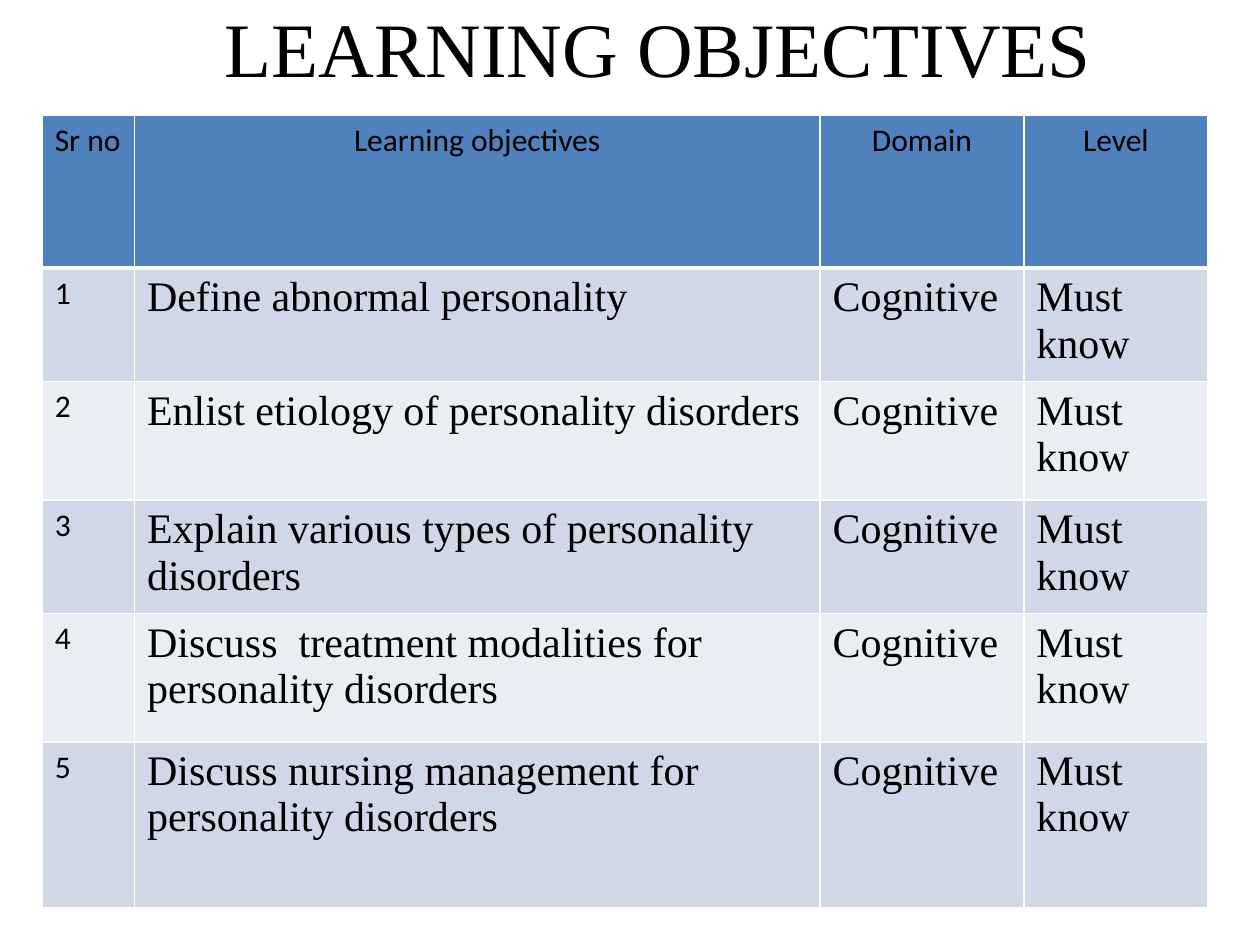
from lxml import etree
from pptx import Presentation
from pptx.dml.color import RGBColor
from pptx.enum.text import MSO_ANCHOR, PP_ALIGN
from pptx.oxml.ns import qn
from pptx.util import Cm, Pt

CENTER, LEFT = PP_ALIGN.CENTER, PP_ALIGN.LEFT
MIDDLE = MSO_ANCHOR.MIDDLE
SERIF, SANS = "Times New Roman", "Calibri"
HEAD, BANDS = "4F81BD", ("E9EDF4", "D0D8E8")


def style(para, font, size, align):
    para.alignment = align
    for run in para.runs:
        run.font.name = font
        run.font.size = Pt(size)
        run.font.bold = False
        run.font.color.rgb = RGBColor.from_string("000000")


def border(cell, base):
    props = cell._tc.get_or_add_tcPr()
    for i, side in enumerate(("lnL", "lnR", "lnT", "lnB")):
        width = base if side == "lnB" else 1
        line = etree.Element(qn("a:" + side), w=str(Pt(width)))
        fill = etree.SubElement(line, qn("a:solidFill"))
        etree.SubElement(fill, qn("a:srgbClr"), val="FFFFFF")
        props.insert(i, line)


prs = Presentation()
prs.slide_width, prs.slide_height = Cm(25.4), Cm(19.05)
slide = prs.slides.add_slide(prs.slide_layouts[6])

# Title, shifted right by a wider left inset
title = slide.shapes.add_textbox(Cm(1.27), Cm(-0.64), Cm(22.86), Cm(3.18))
frame = title.text_frame
frame.word_wrap = True
frame.vertical_anchor = MIDDLE
frame.margin_left = Cm(1.4)
frame.text = "LEARNING OBJECTIVES"
style(frame.paragraphs[0], SERIF, 44, CENTER)

# Table content
goals = [
    "Define abnormal personality",
    "Enlist etiology of personality disorders",
    "Explain various types of personality disorders",
    "Discuss  treatment modalities for personality disorders",
    "Discuss nursing management for personality disorders",
]
rows = [("Sr no", "Learning objectives", "Domain", "Level")]
rows += [(str(n), goal, "Cognitive", "Must know")
         for n, goal in enumerate(goals, 1)]
widths = [1.86, 13.82, 4.11, 3.71]
heights = [3.07, 2.21, 2.39, 2.26, 2.59, 3.35]

# Table grid
table = slide.shapes.add_table(
    len(rows), len(widths), Cm(0.85), Cm(2.33),
    Cm(sum(widths)), Cm(sum(heights))).table
for col, width in zip(table.columns, widths):
    col.width = Cm(width)
for row, height in zip(table.rows, heights):
    row.height = Cm(height)

# Cells: header in sans, body in serif except the number column
for r, row in enumerate(rows):
    for c, text in enumerate(row):
        cell = table.cell(r, c)
        cell.text = text
        small = r == 0 or c == 0
        style(cell.text_frame.paragraphs[0],
              SANS if small else SERIF, 18 if small else 24,
              CENTER if r == 0 and c > 0 else LEFT)
        cell.fill.solid()
        cell.fill.fore_color.rgb = RGBColor.from_string(
            BANDS[r % 2] if r else HEAD)
        border(cell, 1 if r else 3)

prs.save("out.pptx")
